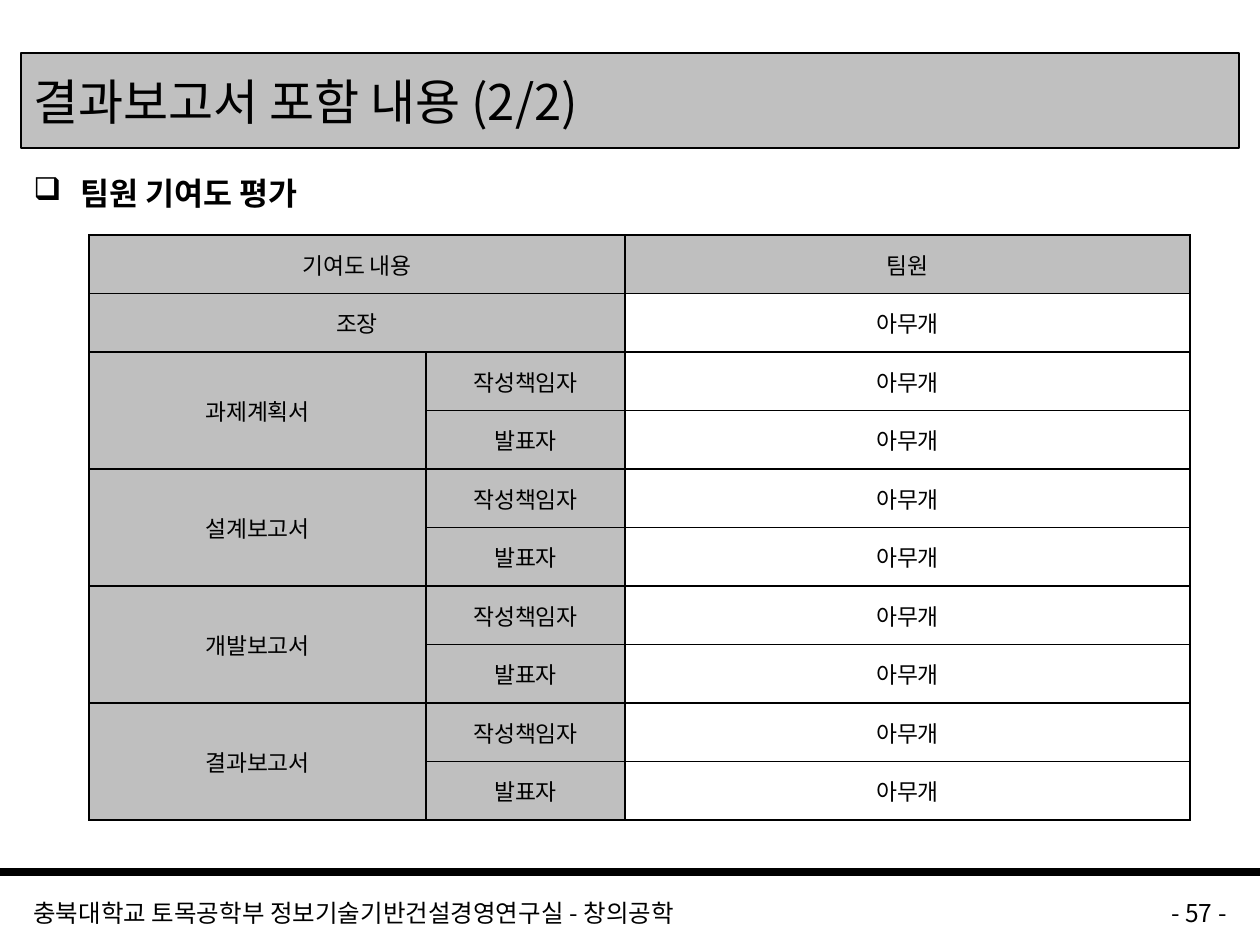
from dataclasses import dataclass

from lxml import etree
from pptx import Presentation
from pptx import util as u
from pptx.dml.color import RGBColor
from pptx.enum import shapes, text
from pptx.oxml import parse_xml
from pptx.oxml.ns import nsdecls, qn

TITLE = "결과보고서 포함 내용 (2/2)"
HEADING = "팀원 기여도 평가"
FOOTER = "충북대학교 토목공학부 정보기술기반건설경영연구실 - 창의공학"
PAGE = "- 57 -"
HEADER = ("기여도 내용", "팀원")
LEADER = "조장"
REPORTS = ["과제계획서", "설계보고서", "개발보고서", "결과보고서"]
ROLES = ["작성책임자", "발표자"]
MEMBER = "아무개"


@dataclass(frozen=True)
class Theme:
    font: str = "Noto Sans CJK KR"
    ink: str = "000000"
    title_fill: str = "C0C0C0"
    label_fill: str = "BFBFBF"
    title: int = 28
    heading: int = 18
    footer: int = 14
    cell: int = 13
    border: int = 1


T = Theme()
SLIDE = (1260, 945)
TITLE_BOX = (21, 53, 1218, 95)
BODY_BOX = (21, 168, 1218, 683)
FOOTER_BOX = (21, 892, 987, 32)
PAGE_BOX = (1029, 892, 210, 32)
RULE_Y = 872
INDENT = 47
TABLE_AT = (89, 235)
COLUMNS = (337, 199, 565)
TABLE_HEIGHT = 585
LEFT, CENTER, RIGHT = (text.PP_ALIGN.LEFT, text.PP_ALIGN.CENTER,
                       text.PP_ALIGN.RIGHT)


def px(n):
    return u.Emu(round(n * 914400 / 126))


def write(tf, words, size, align=LEFT, bold=False):
    tf.text = words
    p = tf.paragraphs[0]
    p.alignment = align
    r = p.runs[0]
    r.font.name = T.font
    r.font.size = u.Pt(size)
    r.font.bold = bold
    r.font.color.rgb = RGBColor.from_string(T.ink)
    ea = etree.SubElement(r.font._element, qn("a:ea"))
    ea.set("typeface", T.font)
    return p


def add_text(s, box, words, size, align=LEFT, bold=False):
    tf = s.shapes.add_textbox(*map(px, box)).text_frame
    tf.word_wrap = True
    return write(tf, words, size, align, bold)


def add_bullet(p, mark):
    pPr = p._p.get_or_add_pPr()
    pPr.set("marL", str(px(INDENT)))
    pPr.set("indent", str(-px(INDENT)))
    etree.SubElement(pPr, qn("a:buChar")).set("char", mark)


def add_rule(s):
    line = s.shapes.add_connector(shapes.MSO_CONNECTOR.STRAIGHT,
                                  0, px(RULE_Y), px(SLIDE[0]), px(RULE_Y))
    line.line.color.rgb = RGBColor.from_string(T.ink)
    line.line.width = u.Pt(4.5)
    etree.SubElement(line._element.spPr, qn("a:effectLst"))


def add_title(s):
    sp = s.shapes.add_shape(shapes.MSO_SHAPE.RECTANGLE, *map(px, TITLE_BOX))
    sp.shadow.inherit = False
    sp.fill.solid()
    sp.fill.fore_color.rgb = RGBColor.from_string(T.title_fill)
    sp.line.color.rgb = RGBColor.from_string(T.ink)
    sp.line.width = u.Pt(0.75)
    sp.text_frame.vertical_anchor = text.MSO_ANCHOR.MIDDLE
    write(sp.text_frame, TITLE, T.title)


def style_cell(cell, shaded):
    tcPr = cell._tc.get_or_add_tcPr()
    for side in ("lnL", "lnR", "lnT", "lnB"):
        tcPr.append(parse_xml(
            f'<a:{side} {nsdecls("a")} w="{u.Pt(T.border)}"><a:solidFill>'
            f'<a:srgbClr val="{T.ink}"/></a:solidFill></a:{side}>'))
    if shaded:
        cell.fill.solid()
        cell.fill.fore_color.rgb = RGBColor.from_string(T.label_fill)
    else:
        cell.fill.background()
    cell.vertical_anchor = text.MSO_ANCHOR.MIDDLE


def add_contributions(s):
    rows = [(HEADER[0], None, HEADER[1]), (LEADER, None, MEMBER)]
    for report in REPORTS:
        for i, role in enumerate(ROLES):
            rows.append((None if i else report, role, MEMBER))

    table = s.shapes.add_table(len(rows), len(COLUMNS), *map(px, TABLE_AT),
                               px(sum(COLUMNS)), px(TABLE_HEIGHT)).table
    for column, width in zip(table.columns, COLUMNS):
        column.width = px(width)
    for i, row in enumerate(rows):
        for j, words in enumerate(row):
            cell = table.cell(i, j)
            style_cell(cell, shaded=i == 0 or j < 2)
            if words:
                write(cell.text_frame, words, T.cell, CENTER)
    for i in range(2):
        table.cell(i, 0).merge(table.cell(i, 1))
    step = len(ROLES)
    for i in range(2, len(rows), step):
        table.cell(i, 0).merge(table.cell(i + step - 1, 0))


def main():
    prs = Presentation()
    prs.slide_width, prs.slide_height = map(px, SLIDE)
    s = prs.slides.add_slide(prs.slide_layouts[6])
    add_rule(s)
    add_text(s, FOOTER_BOX, FOOTER, T.footer)
    add_text(s, PAGE_BOX, PAGE, T.footer, RIGHT)
    add_title(s)
    add_bullet(add_text(s, BODY_BOX, HEADING, T.heading, bold=True), "❑")
    add_contributions(s)
    prs.save("out.pptx")


if __name__ == "__main__":
    main()
